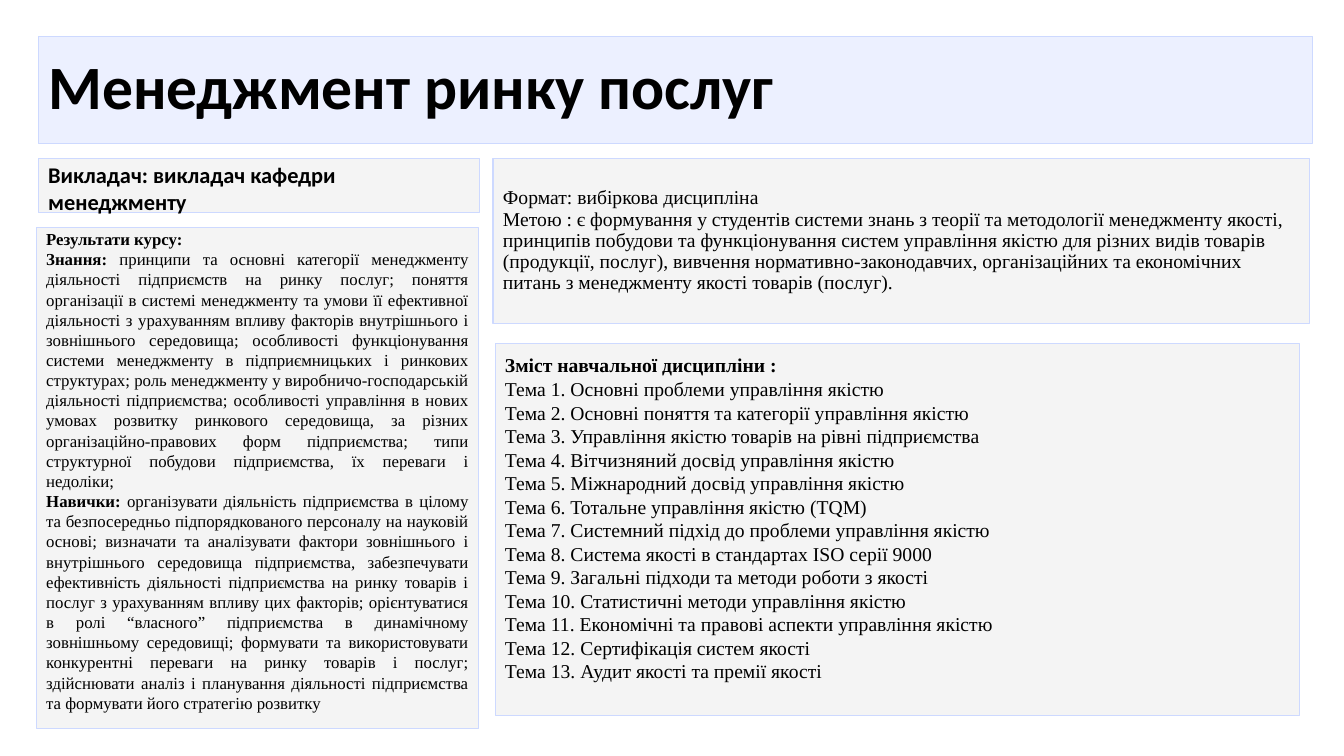
from pptx import Presentation
from pptx.dml.color import RGBColor
from pptx.enum import shapes, text
from pptx.oxml.ns import qn
from pptx.util import Inches, Pt
from lxml import etree

# Content: each paragraph is a list of (words, bold) runs
SERIF, SANS = "Times New Roman", "Calibri"
TITLE = [[("Менеджмент ринку послуг", True)]]
TUTOR = [[("Викладач: викладач кафедри менеджменту", True)]]
GOAL = [
    [("Формат: вибіркова дисципліна", False)],
    [("Метою : є формування у студентів системи знань з теорії та методології менеджменту якості, принципів побудови та функціонування систем управління якістю для різних видів товарів (продукції, послуг), вивчення нормативно-законодавчих, організаційних та економічних питань з менеджменту якості товарів (послуг).", False)],
]
RESULTS = [
    [("Результати курсу: ", True)],
    [("Знання: ", True),
     ("принципи та основні категорії менеджменту діяльності підприємств на ринку послуг; поняття організації в системі менеджменту та умови її ефективної діяльності з урахуванням впливу факторів внутрішнього і зовнішнього середовища; особливості функціонування системи менеджменту в підприємницьких і ринкових структурах; роль менеджменту у виробничо-господарській діяльності підприємства; особливості управління в нових умовах розвитку ринкового середовища, за різних організаційно-правових форм підприємства; типи структурної побудови підприємства, їх переваги і недоліки; ", False)],
    [("Навички: ", True),
     ("організувати діяльність підприємства в цілому та безпосередньо підпорядкованого персоналу на науковій основі; визначати та аналізувати фактори зовнішнього і внутрішнього середовища підприємства, забезпечувати ефективність діяльності підприємства на ринку товарів і послуг з урахуванням впливу цих факторів; орієнтуватися в ролі “власного” підприємства в динамічному зовнішньому середовищі; формувати та використовувати конкурентні переваги на ринку товарів і послуг; здійснювати аналіз і планування діяльності підприємства та формувати його стратегію розвитку", False)],
]
TOPICS = [
    "Основні проблеми управління якістю",
    "Основні поняття та категорії управління якістю",
    "Управління якістю товарів на рівні підприємства",
    "Вітчизняний досвід управління якістю",
    "Міжнародний досвід управління якістю",
    "Тотальне управління якістю (TQM)",
    "Системний підхід до проблеми управління якістю",
    "Система якості в стандартах ISO серії 9000",
    "Загальні підходи та методи роботи з якості",
    "Статистичні методи управління якістю",
    "Економічні та правові аспекти управління якістю",
    "Сертифікація систем якості",
    "Аудит якості та премії якості",
]
THEMES = [[("Зміст навчальної дисципліни :", True)]] + [
    [(f"Тема {num}. {name}", False)] for num, name in enumerate(TOPICS, 1)]

LEFT, JUST = text.PP_ALIGN.LEFT, text.PP_ALIGN.JUSTIFY
MID, TOP = text.MSO_ANCHOR.MIDDLE, text.MSO_ANCHOR.TOP
BLUE, GRAY, EDGE, INK = ("E5EBFF", 70), ("F0F0F0", 69), "CDD9FF", "000000"

# Place, fill, paragraphs, font, size, line spacing, align, anchor, top and bottom inset
PANELS = [
    ((0.38, 0.36, 12.64, 1.06), BLUE, TITLE, SANS, 44, 0.9, LEFT, MID, 0.05, 0.05),
    ((4.91, 3.41, 7.98, 3.69), GRAY, THEMES, SERIF, 14, 1.0, LEFT, MID, 0.05, 0.28),
    ((0.38, 1.57, 4.38, 0.54), GRAY, TUTOR, SANS, 16, 1.0, LEFT, TOP, 0.03, 0),
    ((0.36, 2.26, 4.39, 4.97), GRAY, RESULTS, SERIF, 12, 1.0, JUST, TOP, 0.01, 0),
    ((4.89, 1.57, 8.1, 1.64), GRAY, GOAL, SERIF, 14, 0.9, LEFT, MID, 0.05, 0.05),
]


def paint(color, code):
    color.rgb = RGBColor.from_string(code)


def panel(slide, place, fill, paras, face, size, gap, align, anchor, top, bottom):
    box = slide.shapes.add_shape(shapes.MSO_SHAPE.RECTANGLE, *map(Inches, place))
    box.shadow.inherit = False
    # Translucent fill and thin edge
    code, alpha = fill
    box.fill.solid()
    paint(box.fill.fore_color, code)
    tint = box.fill._xPr.find(qn("a:solidFill"))[0]
    etree.SubElement(tint, qn("a:alpha"), val=str(alpha * 1000))
    paint(box.line.color, EDGE)
    box.line.width = Pt(0.75)
    # Text
    frame = box.text_frame
    frame.word_wrap = True
    frame.vertical_anchor = anchor
    frame.margin_top, frame.margin_bottom = Inches(top), Inches(bottom)
    for i, runs in enumerate(paras):
        para = frame.add_paragraph() if i else frame.paragraphs[0]
        para.alignment, para.line_spacing = align, gap
        para.font.name, para.font.size = face, Pt(size)
        paint(para.font.color, INK)
        for words, bold in runs:
            run = para.add_run()
            run.text, run.font.bold = words, bold


# Build the slide
deck = Presentation()
deck.slide_width, deck.slide_height = Inches(13.33), Inches(7.5)
page = deck.slides.add_slide(deck.slide_layouts[6])
for item in PANELS:
    panel(page, *item)
deck.save("out.pptx")
